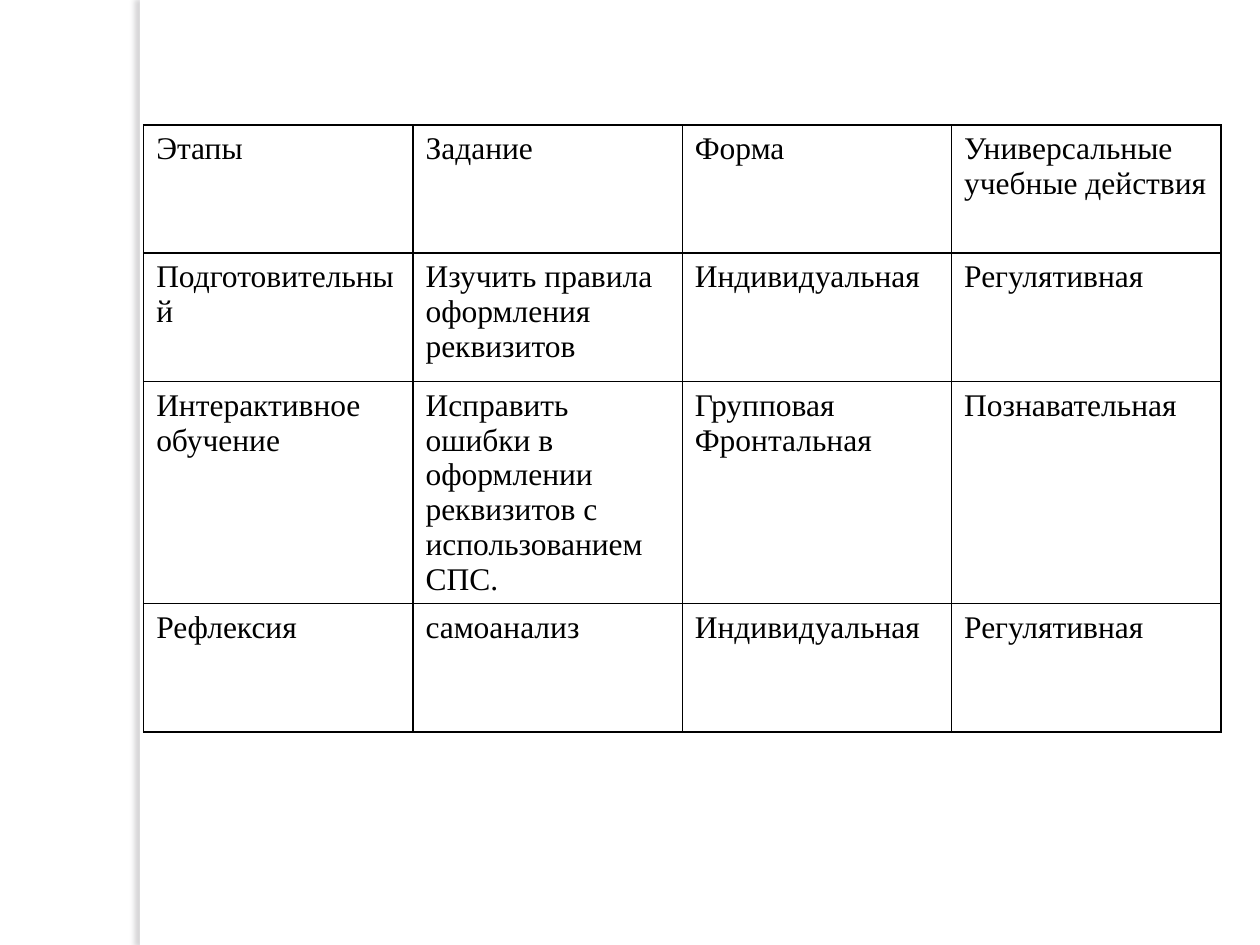
from dataclasses import dataclass

from lxml import etree
from pptx import Presentation
from pptx.dml.color import RGBColor
from pptx.enum.shapes import MSO_SHAPE
from pptx.oxml import parse_xml
from pptx.oxml.ns import nsdecls, qn
from pptx.util import Inches, Pt

RECTANGLE = MSO_SHAPE.RECTANGLE
BLANK_LAYOUT = 6


@dataclass(frozen=True)
class Theme:
    paper: str = "FFFFFF"
    ink: str = "000000"
    shadow: str = "646068"
    font: str = "Times New Roman"
    body_size: int = 18
    border_width: int = 1


STAGES = [
    ["Этапы", "Задание", "Форма", "Универсальные учебные действия"],
    ["Подготовительный", "Изучить правила оформления реквизитов",
     "Индивидуальная", "Регулятивная"],
    ["Интерактивное обучение",
     "Исправить ошибки в оформлении реквизитов с использованием СПС.",
     "Групповая\nФронтальная", "Познавательная"],
    ["Рефлексия", "самоанализ", "Индивидуальная", "Регулятивная"],
]


def write_text(frame, text, *, font, size, color):
    for index, line in enumerate(text.split("\n")):
        para = frame.paragraphs[0] if index == 0 else frame.add_paragraph()
        span = para.add_run()
        span.text = line
        span.font.name = font
        span.font.size = Pt(size)
        span.font.color.rgb = RGBColor.from_string(color)


class SlideBuilder:
    def __init__(self, slide, theme):
        self.slide = slide
        self.theme = theme

    def background(self):
        fill = self.slide.background.fill
        fill.solid()
        fill.fore_color.rgb = RGBColor.from_string(self.theme.paper)

    def shadowed_strip(self, left, top, width, height):
        strip = self.slide.shapes.add_shape(
            RECTANGLE, Inches(left), Inches(top), Inches(width), Inches(height))
        strip.fill.solid()
        strip.fill.fore_color.rgb = RGBColor.from_string(self.theme.paper)
        strip.line.fill.background()
        strip.shadow.inherit = False
        effects = strip.element.spPr.find(qn("a:effectLst"))
        effects.append(parse_xml(
            f'<a:outerShdw {nsdecls("a")} blurRad="{Pt(3)}" dist="{Pt(3)}" '
            f'dir="10800000" algn="tl" rotWithShape="0">'
            f'<a:srgbClr val="{self.theme.shadow}"><a:alpha val="25000"/></a:srgbClr>'
            f'</a:outerShdw>'))

    def cell_borders(self, cell):
        properties = cell._tc.get_or_add_tcPr()
        for index, side in enumerate(("lnL", "lnR", "lnT", "lnB")):
            line = etree.Element(qn(f"a:{side}"), w=str(Pt(self.theme.border_width)))
            fill = etree.SubElement(line, qn("a:solidFill"))
            etree.SubElement(fill, qn("a:srgbClr"), val=self.theme.ink)
            properties.insert(index, line)

    def table(self, rows, left, top, width, row_heights):
        column_count = len(rows[0])
        table = self.slide.shapes.add_table(
            len(rows), column_count, Inches(left), Inches(top),
            Inches(width), Inches(sum(row_heights))).table
        table.first_row = False
        table.horz_banding = False
        for column in table.columns:
            column.width = Inches(width / column_count)
        for row, height, texts in zip(table.rows, row_heights, rows):
            row.height = Inches(height)
            for cell, text in zip(row.cells, texts):
                cell.fill.background()
                self.cell_borders(cell)
                write_text(cell.text_frame, text, font=self.theme.font,
                           size=self.theme.body_size, color=self.theme.ink)


def main():
    deck = Presentation()
    deck.slide_width = Inches(10)
    deck.slide_height = Inches(7.5)
    page = deck.slides.add_slide(deck.slide_layouts[BLANK_LAYOUT])
    builder = SlideBuilder(page, Theme())
    builder.background()
    builder.shadowed_strip(1.11, 0, 0.08, 7.5)
    builder.table(STAGES, 1.14, 0.99, 8.55, [1.02, 1.02, 1.76, 1.02])
    deck.save("out.pptx")


if __name__ == "__main__":
    main()
